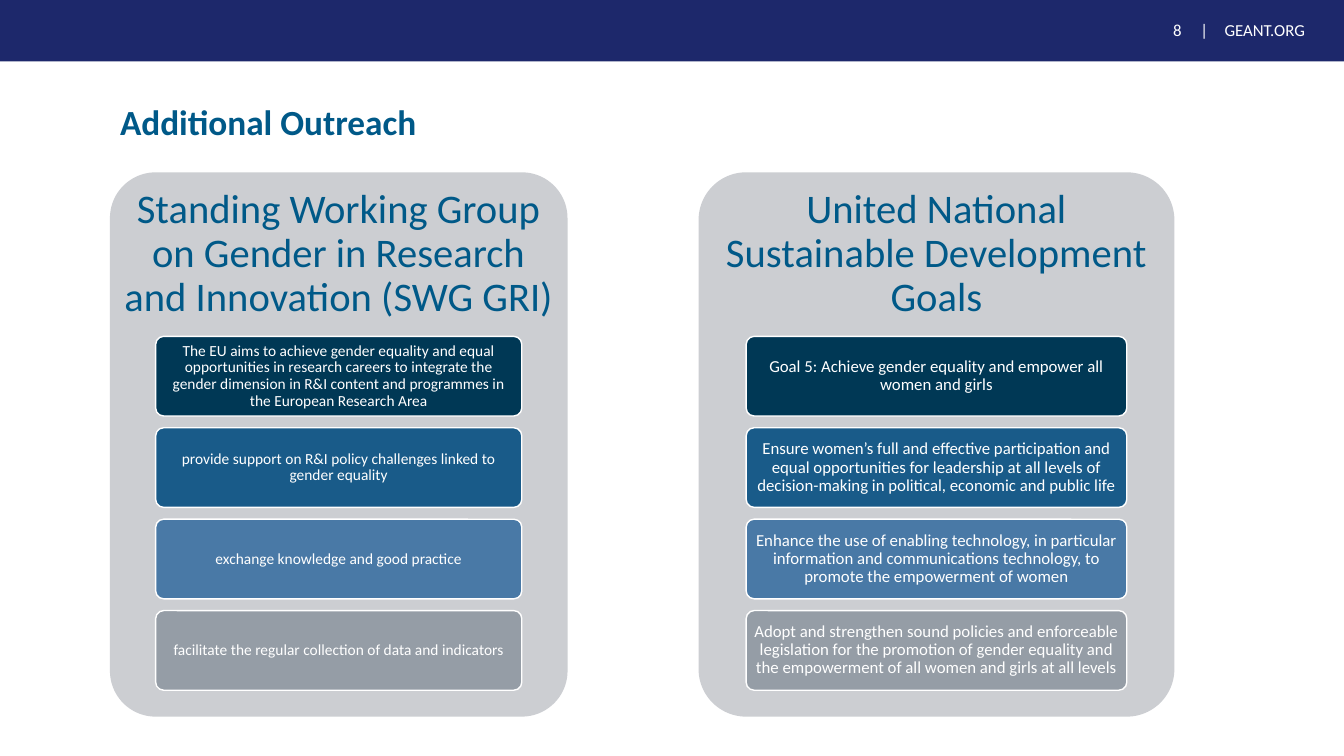
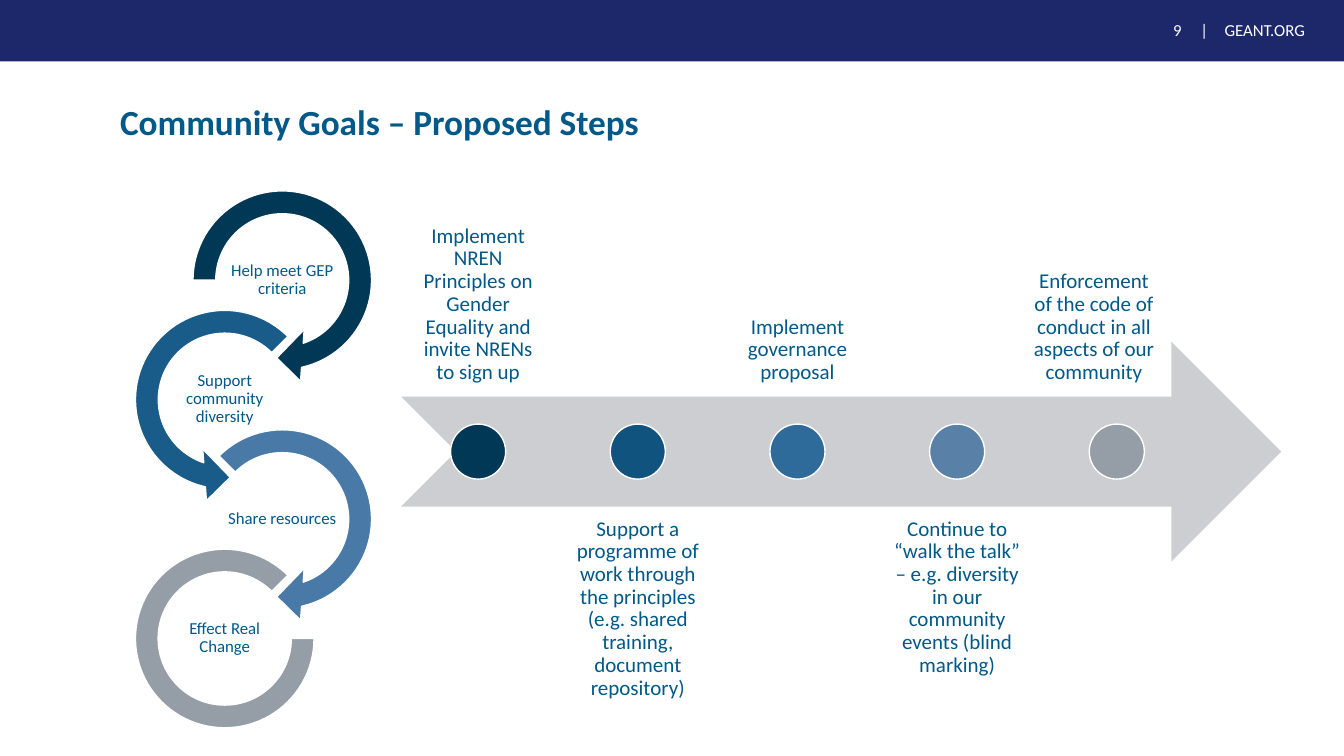
from dataclasses import dataclass

import lxml.etree
import pptx
import pptx.dml.color
import pptx.enum.shapes
import pptx.enum.text
import pptx.oxml.ns
import pptx.util

SHAPE = pptx.enum.shapes.MSO_SHAPE
ANCHOR = pptx.enum.text.MSO_ANCHOR
ALIGN = pptx.enum.text.PP_ALIGN

# The slide is a grid of 100 columns by 100 rows
WIDE, HIGH = pptx.util.Inches(13.333), pptx.util.Inches(7.5)


@dataclass(frozen=True)
class Theme:
    font: str = "Calibri"
    white: str = "FFFFFF"
    band: str = "1D286B"
    ink: str = "005988"
    pale: str = "CCCED2"
    tints: tuple[str, ...] = ("003855", "195B89", "4979A6", "959DA6")
    dots: tuple[str, ...] = ("003855", "10537E", "2E6A9A", "5981A8", "959DA6")
    title: float = 25.2
    head: float = 29
    step: float = 15
    small: float = 12
    tiny: float = 11


THEME = Theme()


@dataclass(frozen=True)
class Box:
    """A place on the grid, in columns and rows."""
    left: float
    top: float
    width: float
    height: float

    def lengths(self) -> tuple[int, int, int, int]:
        return (round(self.left * WIDE / 100), round(self.top * HIGH / 100),
                round(self.width * WIDE / 100), round(self.height * HIGH / 100))


@dataclass(frozen=True)
class Panel:
    left: float
    width: float
    head: str
    size: float
    cards: tuple[str, ...]


@dataclass(frozen=True)
class Ring:
    left: float
    kind: SHAPE
    bends: tuple[float, ...]
    text: str
    inset: float = 0  # share of the ring's size


@dataclass(frozen=True)
class Step:
    text: str
    shift: float = 0


PANELS = (
    Panel(8.18, 34.05,
          "Standing Working Group on Gender in Research and Innovation (SWG GRI)",
          THEME.tiny,
          ("The EU aims to achieve gender equality and equal opportunities in "
           "research careers to integrate the gender dimension in R&I content "
           "and programmes in the European Research Area",
           "provide support on R&I policy challenges linked to gender equality",
           "exchange knowledge and good practice",
           "facilitate the regular collection of data and indicators")),
    Panel(51.98, 35.4, "United National Sustainable Development Goals",
          THEME.small,
          ("Goal 5: Achieve gender equality and empower all women and girls",
           "Ensure women’s full and effective participation and equal "
           "opportunities for leadership at all levels of decision-making in "
           "political, economic and public life",
           "Enhance the use of enabling technology, in particular information "
           "and communications technology, to promote the empowerment of women",
           "Adopt and strengthen sound policies and enforceable legislation for "
           "the promotion of gender equality and the empowerment of all women "
           "and girls at all levels")),
)

RINGS = (
    Ring(13.28, SHAPE.CIRCULAR_ARROW, (0.11, 11.42, 45, 108, 0.125),
         "Help meet GEP criteria"),
    Ring(9, SHAPE.LEFT_CIRCULAR_ARROW, (0.11, 11.42, 63, 189, 0.125),
         "Support community diversity"),
    Ring(13.28, SHAPE.CIRCULAR_ARROW, (0.11, 11.42, 45, 135, 0.125),
         "Share resources"),
    Ring(9, SHAPE.BLOCK_ARC, (0, 189, 0.127), "Effect Real Change", 0.07),
)

STEPS = (
    Step("Implement NREN Principles on Gender Equality and invite NRENs to sign up"),
    Step("Support a programme of work through the principles (e.g. shared "
         "training, document repository)"),
    Step("Implement governance proposal"),
    Step("Continue to “walk the talk” – e.g. diversity in our community events "
         "(blind marking)"),
    Step("Enforcement of the code of conduct in all aspects of our community", -1.7),
)


def tint(code: str) -> pptx.dml.color.RGBColor:
    return pptx.dml.color.RGBColor.from_string(code)


def write(shape, text: str, size: float, hue: str, align=ALIGN.CENTER,
          anchor=ANCHOR.MIDDLE, pad: float | None = None, bold: bool = False) -> None:
    """Fill a shape with one formatted paragraph; pad is in inches."""
    frame = shape.text_frame
    frame.text = text
    frame.word_wrap = True
    frame.auto_size = pptx.enum.text.MSO_AUTO_SIZE.NONE
    frame.vertical_anchor = anchor
    if pad is not None:
        frame.margin_left = frame.margin_right = pptx.util.Inches(pad)
        frame.margin_top = frame.margin_bottom = pptx.util.Inches(pad)
    para = frame.paragraphs[0]
    para.alignment = align
    para.line_spacing = 0.9
    for run in para.runs:
        run.font.name = THEME.font
        run.font.size = pptx.util.Pt(size)
        run.font.bold = bold
        run.font.color.rgb = tint(hue)


def draw(slide, kind: SHAPE, box: Box, fill: str, edge: bool = False,
         bends: tuple[float, ...] = ()):
    """Add a flat shape, with a thin white edge if asked."""
    shape = slide.shapes.add_shape(kind, *box.lengths())
    shape.shadow.inherit = False
    shape.fill.solid()
    shape.fill.fore_color.rgb = tint(fill)
    if edge:
        shape.line.color.rgb = tint(THEME.white)
        shape.line.width = pptx.util.Pt(1)
    else:
        shape.line.fill.background()
    for i, bend in enumerate(bends):
        shape.adjustments[i] = bend
    return shape


def label(slide, box: Box, text: str, size: float, **style):
    shape = slide.shapes.add_textbox(*box.lengths())
    write(shape, text, size, style.pop("hue", THEME.ink), **style)
    return shape


def start(deck, number: int, title: str):
    """Add a slide with its band, page mark and title."""
    slide = deck.slides.add_slide(deck.slide_layouts[5])
    draw(slide, SHAPE.RECTANGLE, Box(0, 0, 100, 8.13), THEME.band)
    mark = label(slide, Box(86.55, 1.93, 13.2, 4.27), f"{number}\t|\tGEANT.ORG",
                 THEME.small, hue=THEME.white, align=ALIGN.LEFT)
    # Tab stops set the bar and the address apart
    props = mark.text_frame.paragraphs[0]._p.get_or_add_pPr()
    tabs = lxml.etree.SubElement(props, pptx.oxml.ns.qn("a:tabLst"))
    for stop in (0.27, 0.51):
        lxml.etree.SubElement(tabs, pptx.oxml.ns.qn("a:tab"),
                              pos=str(pptx.util.Inches(stop)), algn="l")
    head = slide.shapes.title
    head.left, head.top, head.width, head.height = Box(8.18, 13.33, 81.15, 6.27).lengths()
    write(head, title, THEME.title, THEME.ink, align=ALIGN.LEFT, bold=True)
    return slide


def add_panel(slide, panel: Panel) -> None:
    top, height = 22.8, 72
    draw(slide, SHAPE.ROUNDED_RECTANGLE, Box(panel.left, top, panel.width, height),
         THEME.pale, bends=(0.1,))
    label(slide, Box(panel.left, top, panel.width, 0.3 * height), panel.head,
          THEME.head, pad=0.12)
    for i, (text, fill) in enumerate(zip(panel.cards, THEME.tints)):
        box = Box(panel.left + 0.1 * panel.width, 44.5 + 12.09 * i,
                  0.8 * panel.width, 10.53)
        card = draw(slide, SHAPE.ROUNDED_RECTANGLE, box, fill, True, (0.1,))
        write(card, text, panel.size, THEME.white, pad=0.03)


def add_rings(slide) -> None:
    width, height = 15.45, 27.47
    for i, (ring, fill) in enumerate(zip(RINGS, THEME.tints)):
        top = 23.33 + 15.8 * i
        share = 1 - 2 * ring.inset
        box = Box(ring.left + ring.inset * width, top + ring.inset * height,
                  share * width, share * height)
        draw(slide, ring.kind, box, fill, True, ring.bends)
        label(slide, Box(ring.left + 3.4, top + 9.9, 8.65, 7.6), ring.text,
              THEME.small, pad=0.01)


def add_steps(slide) -> None:
    arrow = Box(29.85, 45.2, 65.48, 29.07)
    draw(slide, SHAPE.NOTCHED_RIGHT_ARROW, arrow, THEME.pale)
    wide, high, span = 4.1, 7.28, 11.32
    for i, (step, fill) in enumerate(zip(STEPS, THEME.dots)):
        mid = 35.58 + 11.88 * i
        dot = Box(mid - wide / 2, arrow.top + (arrow.height - high) / 2, wide, high)
        draw(slide, SHAPE.OVAL, dot, fill, True)
        # Labels take turns above and below the arrow
        top, anchor = (66.93, ANCHOR.TOP) if i % 2 else (23.33, ANCHOR.BOTTOM)
        label(slide, Box(mid - span / 2 + step.shift, top, span, arrow.height),
              step.text, THEME.step, anchor=anchor, pad=0.12)


def main() -> None:
    deck = pptx.Presentation()
    deck.slide_width, deck.slide_height = WIDE, HIGH

    # Outreach panels
    slide = start(deck, 8, "Additional Outreach")
    for panel in PANELS:
        add_panel(slide, panel)

    # Goals and steps
    slide = start(deck, 9, "Community Goals – Proposed Steps")
    add_rings(slide)
    add_steps(slide)

    deck.save("out.pptx")


if __name__ == "__main__":
    main()
